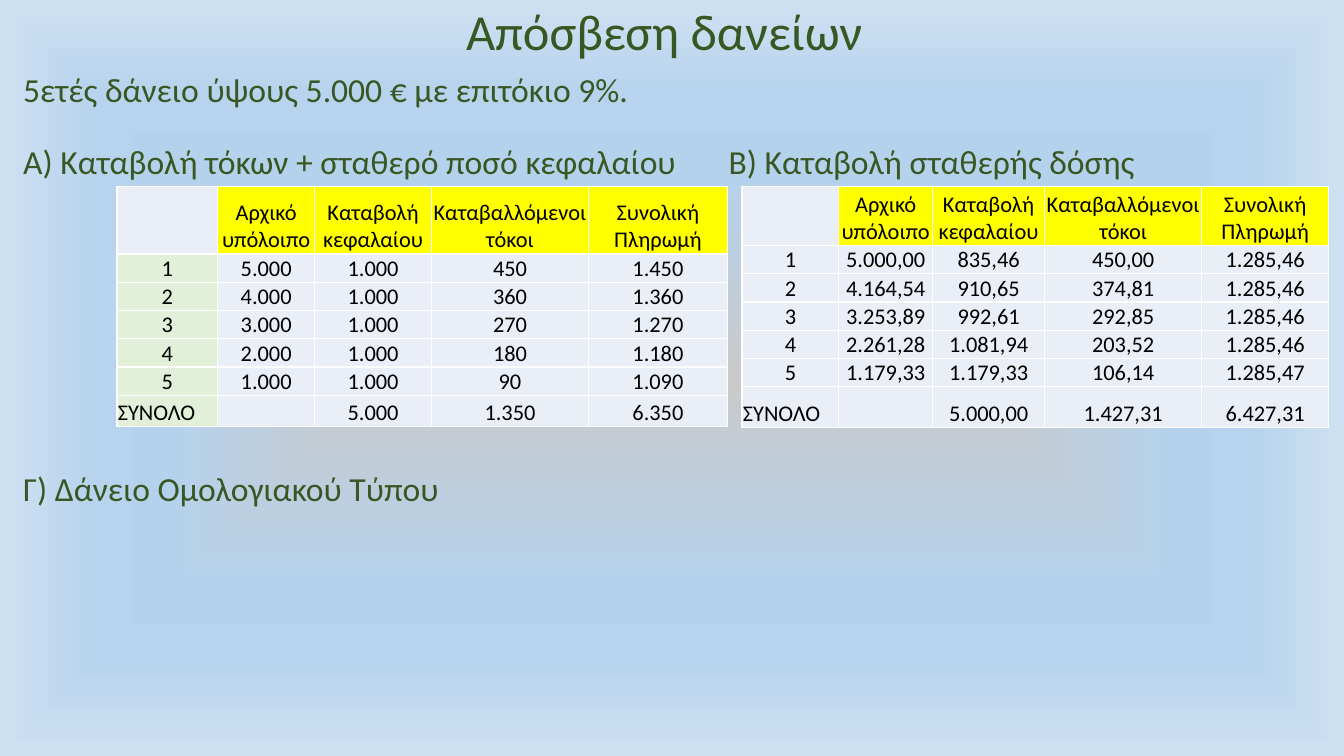
from pptx import Presentation
from pptx.dml.color import RGBColor
from pptx.enum.text import MSO_ANCHOR, PP_ALIGN
from pptx.oxml import parse_xml
from pptx.oxml.ns import nsdecls, qn
from pptx.util import Pt

GREEN, BLACK, WHITE = "385723", "000000", "FFFFFF"
YELLOW, PALE_BLUE, PALE_GREEN = "FFFF00", "EAEFF7", "E2F0D9"
TABLE_TOP = 133.2
ROW = 20.2
BACKDROP = [(0, "C9C9C9"), (36, "BBCFE1"), (45, "B8D1E7"), (54, "B5D2EC"),
            (65, "B5D2EC"), (75, "B7D3ED"), (100, "CEE1F2")]
HEADER = ["", "Αρχικό υπόλοιπο", "Καταβολή κεφαλαίου",
          "Καταβαλλόμενοι τόκοι", "Συνολική Πληρωμή"]
FIXED_PRINCIPAL = [
    HEADER,
    ["1", "5.000", "1.000", "450", "1.450"],
    ["2", "4.000", "1.000", "360", "1.360"],
    ["3", "3.000", "1.000", "270", "1.270"],
    ["4", "2.000", "1.000", "180", "1.180"],
    ["5", "1.000", "1.000", "90", "1.090"],
    ["ΣΥΝΟΛΟ", "", "5.000", "1.350", "6.350"],
]
FIXED_INSTALMENT = [
    HEADER,
    ["1", "5.000,00", "835,46", "450,00", "1.285,46"],
    ["2", "4.164,54", "910,65", "374,81", "1.285,46"],
    ["3", "3.253,89", "992,61", "292,85", "1.285,46"],
    ["4", "2.261,28", "1.081,94", "203,52", "1.285,46"],
    ["5", "1.179,33", "1.179,33", "106,14", "1.285,47"],
    ["ΣΥΝΟΛΟ", "", "5.000,00", "1.427,31", "6.427,31"],
]


def rgb(value):
    return RGBColor.from_string(value)


class Deck:
    """Holds the font and the slide being drawn; lengths are in points."""
    font = "Calibri"

    def __init__(self, prs):
        self.s = prs.slides.add_slide(prs.slide_layouts[6])

    def style(self, r, size, color):
        r.font.name, r.font.size = self.font, Pt(size)
        r.font.color.rgb = rgb(color)

    def background(self, stops):
        gs = "".join(f'<a:gs pos="{pos * 1000}"><a:srgbClr val="{color}"/></a:gs>'
                     for pos, color in stops)
        bg = parse_xml(
            f'<p:bg {nsdecls("p", "a")}><p:bgPr><a:gradFill rotWithShape="1">'
            f'<a:gsLst>{gs}</a:gsLst><a:path path="shape">'
            '<a:fillToRect l="50000" t="50000" r="50000" b="50000"/></a:path>'
            '</a:gradFill><a:effectLst/></p:bgPr></p:bg>')
        self.s.element.find(qn("p:cSld")).insert(0, bg)

    def text(self, x, y, w, h, lines, size, align=PP_ALIGN.LEFT, anchor=MSO_ANCHOR.TOP):
        """Each line is a pair of text and space before it."""
        tf = self.s.shapes.add_textbox(Pt(x), Pt(y), Pt(w), Pt(h)).text_frame
        tf.word_wrap, tf.vertical_anchor = True, anchor
        tf.text = "\n".join(line for line, _ in lines)
        for p, (_, gap) in zip(tf.paragraphs, lines):
            p.alignment, p.line_spacing, p.space_before = align, 0.9, Pt(gap)
            for r in p.runs:
                self.style(r, size, GREEN)

    def table(self, x, y, widths, heights, rows, label_fill):
        tbl = self.s.shapes.add_table(len(rows), len(widths), Pt(x), Pt(y),
                                      Pt(sum(widths)), Pt(sum(heights))).table
        tbl.first_row = tbl.horz_banding = False
        for col, width in zip(tbl.columns, widths):
            col.width = Pt(width)
        for i, (row, height) in enumerate(zip(rows, heights)):
            tbl.rows[i].height = Pt(height)
            for j, value in enumerate(row):
                if i == 0:
                    fill = YELLOW if j else PALE_BLUE
                else:
                    fill = PALE_BLUE if j else label_fill
                is_total_label = j == 0 and i == len(rows) - 1
                align = PP_ALIGN.LEFT if is_total_label else PP_ALIGN.CENTER
                self.cell(tbl.cell(i, j), value, fill, align)

    def cell(self, cell, value, fill, align):
        cell.margin_left = cell.margin_right = cell.margin_top = Pt(0.72)
        cell.margin_bottom = 0
        cell.vertical_anchor = MSO_ANCHOR.BOTTOM
        p = cell.text_frame.paragraphs[0]
        p.alignment = align
        r = p.add_run()
        r.text = value
        self.style(r, 16, BLACK)
        tcPr = cell._tc.get_or_add_tcPr()
        for side in ("lnL", "lnR", "lnT", "lnB"):
            tcPr.append(parse_xml(
                f'<a:{side} {nsdecls("a")} w="{Pt(1)}"><a:solidFill>'
                f'<a:srgbClr val="{WHITE}"/></a:solidFill></a:{side}>'))
        cell.fill.solid()
        cell.fill.fore_color.rgb = rgb(fill)


def main():
    prs = Presentation()
    prs.slide_width, prs.slide_height = Pt(960), Pt(540)
    deck = Deck(prs)
    deck.background(BACKDROP)
    deck.text(60.5, 0, 828, 49, [("Απόσβεση δανείων", 0)], 36,
              PP_ALIGN.CENTER, MSO_ANCHOR.MIDDLE)
    deck.table(83.5, TABLE_TOP, [72, 69.3, 83.5, 112, 99.4],
               [48.2] + [ROW] * 6, FIXED_PRINCIPAL, PALE_GREEN)
    deck.table(530, TABLE_TOP, [69.2, 67, 80, 112.2, 90.7],
               [42.2] + [ROW] * 5 + [28.8], FIXED_INSTALMENT, PALE_BLUE)
    deck.text(9.4, 49, 950.6, 474.5, [
        ("5ετές δάνειο ύψους 5.000 € με επιτόκιο 9%.", 0),
        ("Α) Καταβολή τόκων + σταθερό ποσό κεφαλαίου\t\tΒ) Καταβολή σταθερής δόσης", 25.5),
        ("Γ) Δάνειο Ομολογιακού Τύπου", 207.5),
    ], 24)
    prs.save("out.pptx")


if __name__ == "__main__":
    main()
